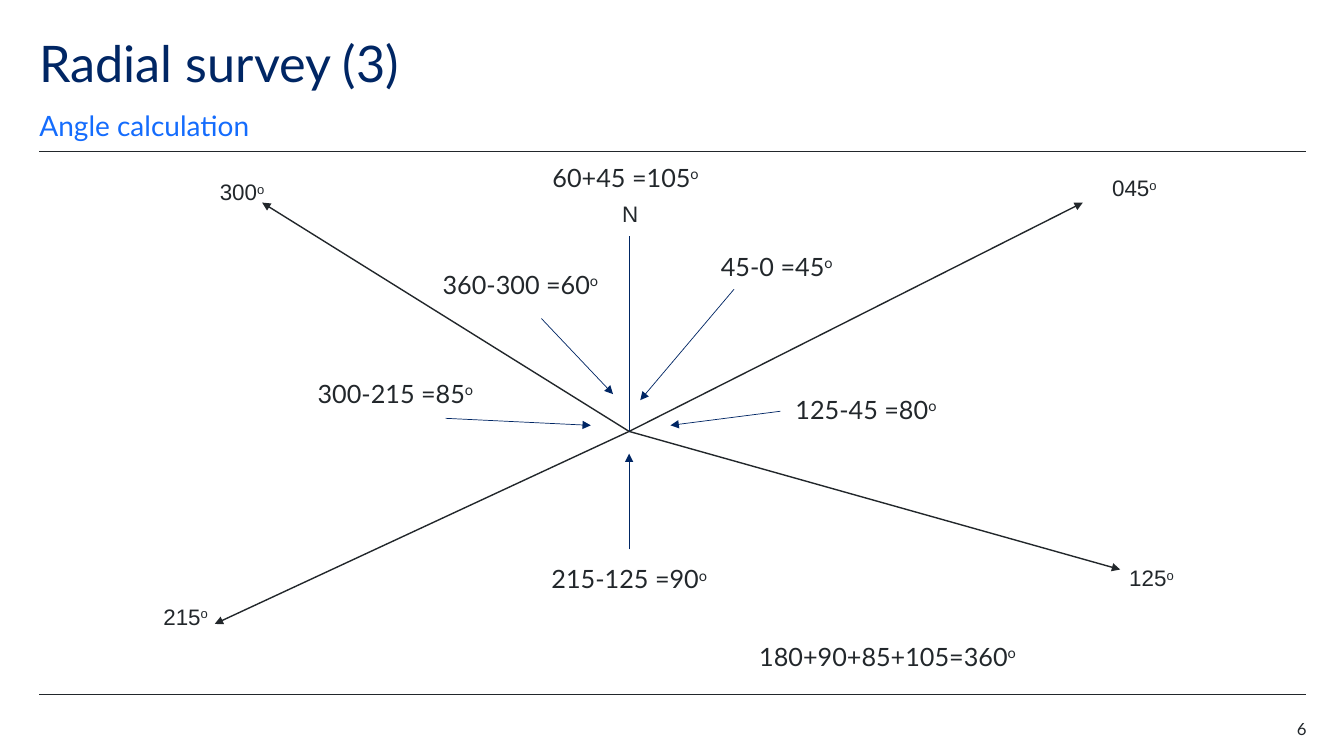
"""Build the radial survey slide that works out the angles between bearings."""
from dataclasses import dataclass

from lxml.etree import SubElement
from pptx import Presentation
from pptx.dml.color import RGBColor as Color
from pptx.enum.shapes import MSO_CONNECTOR as Connector
from pptx.enum.text import MSO_ANCHOR as Anchor, MSO_AUTO_SIZE as AutoSize, PP_ALIGN as Align
from pptx.oxml.ns import qn
from pptx.util import Inches, Pt


@dataclass(frozen=True)
class Theme:
    ink: Color = Color.from_string("22272B")
    navy: Color = Color.from_string("002664")
    blue: Color = Color.from_string("146CFD")
    text_font: str = "Lato"
    bearing_font: str = "Arial"
    title_size: int = 36
    subtitle_size: int = 20
    sum_size: int = 18
    bearing_size: int = 16
    number_size: int = 12
    thin: float = 0.5
    ray: float = 1


class SlideBuilder:
    def __init__(self, deck, theme):
        self.theme = theme
        self.page = deck.slides.add_slide(deck.slide_layouts[5])

    def fill_text(self, box, text, size, color, font=None, wrap=True, anchor=Anchor.TOP,
                  align=Align.LEFT, degrees=False):
        frame = box.text_frame
        frame.margin_left = frame.margin_top = frame.margin_right = frame.margin_bottom = 0
        frame.auto_size = AutoSize.NONE
        frame.word_wrap = wrap
        frame.vertical_anchor = anchor
        para = frame.paragraphs[0]
        para.alignment = align
        para.font.name = font or self.theme.text_font
        para.font.size = Pt(size)
        para.font.color.rgb = color
        para.add_run().text = text
        if degrees:
            span = para.add_run()
            span.text = "o"
            span._r.get_or_add_rPr().set("baseline", "30000")
        return para

    def title(self, text, left, top, width, height):
        box = self.page.shapes.title
        box.left, box.top, box.width, box.height = map(Inches, (left, top, width, height))
        para = self.fill_text(box, text, self.theme.title_size, self.theme.navy)
        para.line_spacing = 0.9

    def text(self, text, left, top, width, height, size, color, **style):
        box = self.page.shapes.add_textbox(*map(Inches, (left, top, width, height)))
        return self.fill_text(box, text, size, color, **style)

    def subtitle(self, text, left, top, width, height):
        para = self.text(text, left, top, width, height, self.theme.subtitle_size,
                         self.theme.blue, anchor=Anchor.BOTTOM)
        para.line_spacing = 1.5
        para.space_after = Pt(12)

    def bearing(self, text, left, top, degrees=True):
        self.text(text, left, top, 0.51, 0.41, self.theme.bearing_size, self.theme.ink,
                  font=self.theme.bearing_font, wrap=False, degrees=degrees)

    def angle_sum(self, text, left, top, width=1.5):
        self.text(text, left, top, width, 0.37, self.theme.sum_size, self.theme.ink,
                  wrap=False, degrees=True)

    def line(self, start, end, color, weight, arrow=False):
        line = self.page.shapes.add_connector(Connector.STRAIGHT, *map(Inches, start + end))
        line.line.color.rgb = color
        line.line.width = Pt(weight)
        if arrow:
            SubElement(line.line._get_or_add_ln(), qn("a:tailEnd"), type="triangle")
        SubElement(line._element.spPr, qn("a:effectLst"))


def main():
    deck = Presentation()
    deck.slide_width, deck.slide_height = Inches(13.33), Inches(7.5)
    theme = Theme()
    slide = SlideBuilder(deck, theme)

    for rule_top in (1.5, 6.89):
        slide.line((0.39, rule_top), (12.95, rule_top), theme.ink, theme.thin)
    slide.title("Radial survey (3)", 0.39, 0.39, 11.02, 0.6)
    slide.subtitle("Angle calculation", 0.39, 1.07, 11.02, 0.34)

    station = (6.24, 4.28)
    rays = [
        ("300", (2.6, 2.01), (2.18, 1.77)),
        ("045", (10.74, 2.01), (11.03, 1.73)),
        ("125", (11.11, 5.65), (11.2, 5.6)),
        ("215", (2.13, 6.19), (1.62, 5.98)),
    ]
    for bearing, tip, label in rays:
        slide.line(station, tip, theme.ink, theme.ray, arrow=True)
        slide.bearing(bearing, *label)
    slide.line(station, (6.24, 2.34), theme.navy, theme.thin)
    slide.bearing("N", 6.17, 1.99, degrees=False)

    angles = [
        ("125-45 =80", (7.89, 3.91), (7.74, 4.08), (6.65, 4.22)),
        ("215-125 =90", (5.47, 5.59), (6.24, 5.45), (6.24, 4.5)),
        ("300-215 =85", (3.15, 3.75), (4.42, 4.15), (5.86, 4.22)),
        ("360-300 =60", (4.39, 2.67), (5.37, 3.16), (6.08, 3.91)),
        ("45-0 =45", (7.15, 2.49), (7.28, 2.87), (6.35, 3.97)),
    ]
    for calculation, label, start, end in angles:
        slide.angle_sum(calculation, *label)
        slide.line(start, end, theme.navy, theme.thin, arrow=True)
    slide.angle_sum("60+45 =105", 5.48, 1.61)
    slide.angle_sum("180+90+85+105=360", 7.53, 6.36, width=2.93)

    slide.text("6", 12.17, 7.13, 0.79, 0.2, theme.number_size, theme.ink, align=Align.RIGHT)
    deck.save("out.pptx")


if __name__ == "__main__":
    main()
